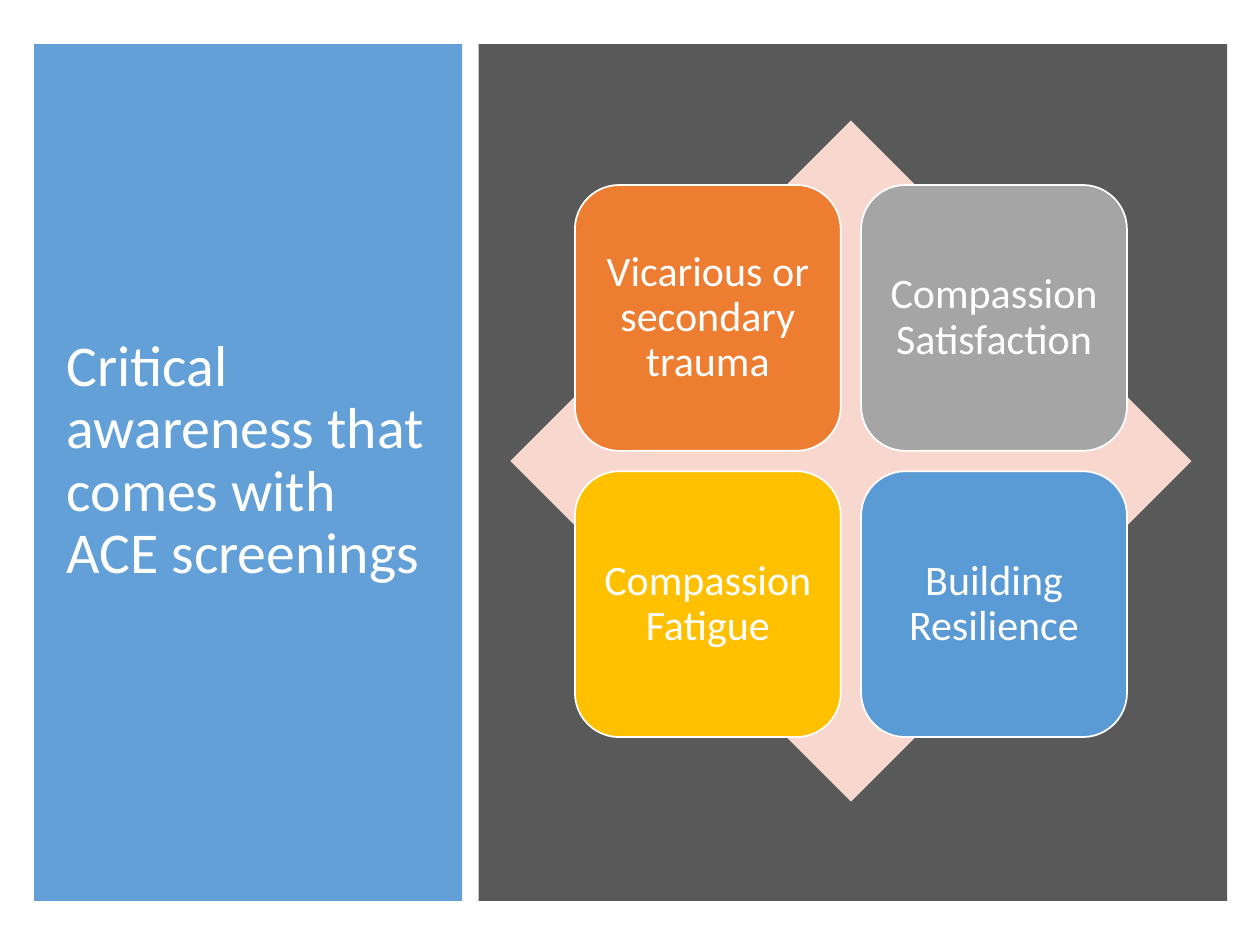
from lxml import etree
from pptx import Presentation
from pptx.dml.color import RGBColor
from pptx.enum.shapes import MSO_SHAPE
from pptx.enum.text import MSO_ANCHOR, MSO_AUTO_SIZE, PP_ALIGN
from pptx.oxml.ns import qn
from pptx.util import Cm, Pt

RECT, ROUND, DIAMOND = MSO_SHAPE.RECTANGLE, MSO_SHAPE.ROUNDED_RECTANGLE, MSO_SHAPE.DIAMOND
MIDDLE, NO_FIT = MSO_ANCHOR.MIDDLE, MSO_AUTO_SIZE.NONE
LEFT, CENTER = PP_ALIGN.LEFT, PP_ALIGN.CENTER
TITLE_ONLY = 5

COLORS = {"white": "FFFFFF", "blue": "5B9BD5", "dark": "595959", "pink": "F8D7CE",
          "orange": "ED7D31", "gray": "A5A5A5", "gold": "FFC000"}


class Deck:
    """Holds the style and the current slide."""
    font = "Calibri"

    def __init__(self, slide):
        self.slide = slide

    def color(self, name):
        return RGBColor.from_string(COLORS[name])

    def label(self, frame, text, size, align):
        frame.word_wrap = True
        frame.auto_size = NO_FIT
        frame.vertical_anchor = MIDDLE
        para = frame.paragraphs[0]
        para.alignment = align
        para.line_spacing = 0.9
        run = para.add_run()
        run.text = text
        run.font.name = self.font
        run.font.size = Pt(size)
        run.font.color.rgb = self.color("white")

    def shape(self, home, kind, box, fill, alpha=None):
        shape = home.shapes.add_shape(kind, *map(Cm, box))
        shape.shadow.inherit = False
        shape.fill.solid()
        shape.fill.fore_color.rgb = self.color(fill)
        shape.line.fill.background()
        if alpha:
            tint = shape.element.spPr.find(qn("a:solidFill"))[0]
            etree.SubElement(tint, qn("a:alpha")).set("val", str(alpha * 1000))
        return shape

    def panel(self, box, fill, alpha=None):
        return self.shape(self.slide, RECT, box, fill, alpha)

    def title(self, box, text, panel):
        title = self.slide.shapes.title
        title.left, title.top, title.width, title.height = map(Cm, box)
        self.label(title.text_frame, text, 33, LEFT)
        panel.element.addnext(title.element)

    def tile(self, group, box, fill, text):
        tile = self.shape(group, ROUND, box, fill)
        tile.line.color.rgb = self.color("white")
        tile.line.width = Pt(1)
        frame = tile.text_frame
        frame.margin_left = frame.margin_right = Cm(0.25)
        frame.margin_top = frame.margin_bottom = Cm(0.25)
        self.label(frame, text, 24, CENTER)

    def matrix(self, left, top, side, tiles):
        group = self.slide.shapes.add_group_shape()
        self.shape(group, DIAMOND, (left, top, side, side), "pink")
        # Two by two tiles, centred on the diamond
        size, gap = 5.36, 0.41
        inset = (side - 2 * size - gap) / 2
        for i, (fill, text) in enumerate(tiles):
            row, col = divmod(i, 2)
            x = left + inset + col * (size + gap)
            y = top + inset + row * (size + gap)
            self.tile(group, (x, y, size, size), fill, text)


def main():
    prs = Presentation()
    prs.slide_width, prs.slide_height = Cm(25.4), Cm(19.05)
    deck = Deck(prs.slides.add_slide(prs.slide_layouts[TITLE_ONLY]))

    # Title panel
    side = deck.panel((0.69, 0.89, 8.63, 17.27), "blue", 95)
    deck.title((1.09, 1.63, 7.75, 15.34),
               "Critical awareness that comes with ACE screenings", side)

    # Matrix on the dark panel
    deck.panel((9.65, 0.89, 15.09, 17.27), "dark")
    deck.matrix(10.29, 2.43, 13.73, [
        ("orange", "Vicarious or secondary trauma"),
        ("gray", "Compassion Satisfaction"),
        ("gold", "Compassion Fatigue"),
        ("blue", "Building Resilience"),
    ])

    prs.save("out.pptx")


if __name__ == "__main__":
    main()
